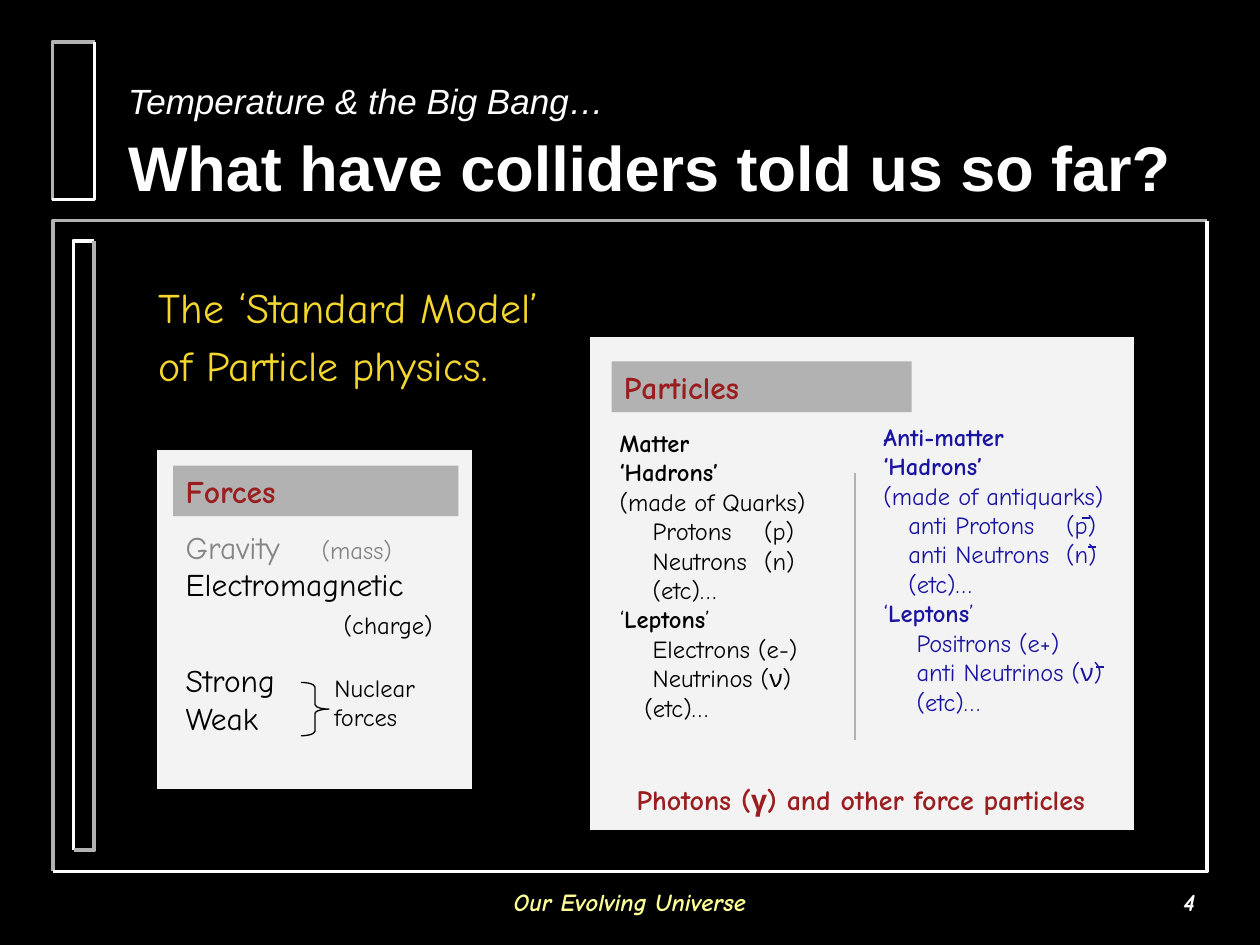
from dataclasses import dataclass

from lxml import etree
from pptx import Presentation
from pptx.dml.color import RGBColor
from pptx.enum.shapes import MSO_CONNECTOR, MSO_SHAPE
from pptx.enum.text import MSO_ANCHOR, MSO_AUTO_SIZE, PP_ALIGN
from pptx.oxml.ns import qn
from pptx.util import Pt

RECT, BRACE = MSO_SHAPE.RECTANGLE, MSO_SHAPE.RIGHT_BRACE
LINE = MSO_CONNECTOR.STRAIGHT
TOP, MIDDLE = MSO_ANCHOR.TOP, MSO_ANCHOR.MIDDLE
LEFT, MID, RIGHT = PP_ALIGN.LEFT, PP_ALIGN.CENTER, PP_ALIGN.RIGHT
FIXED = MSO_AUTO_SIZE.NONE


@dataclass(frozen=True)
class Theme:
    hand: str = "Comic Neue"
    sans: str = "Arial"
    black: str = "000000"
    white: str = "FFFFFF"
    grey: str = "B2B2B2"
    panel: str = "F3F3F3"
    dim: str = "858585"
    red: str = "9A1D1F"
    blue: str = "1914A1"
    gold: str = "F4D72E"
    pale: str = "FFFF99"
    small: int = 14
    mid: int = 16
    big: int = 18
    lead: int = 24
    kicker: int = 20
    gap: int = 40
    title: int = 36


T = Theme()
BODY = {"name": T.hand, "size": T.small, "color": T.black, "bold": False}
BOLD = BODY | {"bold": True}
LARGE = BODY | {"size": T.big}
HEAD = BOLD | {"size": T.big, "color": T.red}
NOTE = HEAD | {"size": T.mid}
ANTI = BODY | {"color": T.blue}
LEAD = BODY | {"size": T.lead, "color": T.gold}
FOOT = BOLD | {"color": T.pale, "italic": True}
TITLE = {"name": T.sans, "size": T.title, "color": T.white, "bold": True}
KICKER = TITLE | {"size": T.kicker, "bold": False, "italic": True}


def rgb(code):
    return RGBColor.from_string(code)


def add_run(para, text, style):
    run = para.add_run()
    run.text = text
    for key, value in style.items():
        if key == "color":
            run.font.color.rgb = rgb(value)
        else:
            setattr(run.font, key, Pt(value) if key == "size" else value)


def set_tabs(para, stops):
    tabs = etree.SubElement(para._p.get_or_add_pPr(), qn("a:tabLst"))
    for stop in stops:
        etree.SubElement(tabs, qn("a:tab"), pos=str(Pt(stop)), algn="l")


def write(frame, lines, align=LEFT, anchor=TOP, stops=()):
    """Fill a frame; each line is a list of (text, style) runs."""
    for key, value in {"word_wrap": True, "auto_size": FIXED,
                       "vertical_anchor": anchor}.items():
        setattr(frame, key, value)
    for i, runs in enumerate(lines):
        para = frame.add_paragraph() if i else frame.paragraphs[0]
        para.alignment = align
        for text, style in runs:
            add_run(para, text, style)
        if stops and any("\t" in text for text, _ in runs):
            set_tabs(para, stops)
    return frame.paragraphs


def place(shape, box):
    for key, value in zip(("left", "top", "width", "height"), box):
        setattr(shape, key, Pt(value))


def add_text(slide, box, lines, **layout):
    shape = slide.shapes.add_textbox(*map(Pt, box))
    return write(shape.text_frame, lines, **layout)


def add_box(slide, box, fill=None, line=None, kind=RECT):
    shape = slide.shapes.add_shape(kind, *map(Pt, box))
    shape.shadow.inherit = False
    if fill:
        shape.fill.solid()
        shape.fill.fore_color.rgb = rgb(fill)
    else:
        shape.fill.background()
    if line:
        shape.line.color.rgb = rgb(line)
        shape.line.width = Pt(0.75)
    else:
        shape.line.fill.background()
    return shape


def add_head(slide, box, text):
    write(add_box(slide, box, T.grey).text_frame, [[(text, HEAD)]])


def add_rule(slide, x, y, dx, dy, color):
    rule = slide.shapes.add_connector(LINE, *map(Pt, (x, y, x + dx, y + dy)))
    rule.line.color.rgb = rgb(color)
    rule.line.width = Pt(1)
    etree.SubElement(rule._element.spPr, qn("a:effectLst"))


def add_frame(slide, box, near, far):
    """Draw a frame as two bends: near by the top left, far by the bottom right."""
    x, y, w, h = map(Pt, box)
    start, end = (x + w, y), (x, y + h)
    for turn, color in (((x, y), near), ((x + w, y + h), far)):
        path = slide.shapes.build_freeform(*start)
        path.add_line_segments([turn, end], close=False)
        bend = path.convert_to_shape()
        bend.shadow.inherit = False
        bend.fill.background()
        bend.line.color.rgb = rgb(color)
        bend.line.width = Pt(2.25)


def add_title(slide):
    title = slide.shapes.title
    place(title, (66, 27.5, 612, 87))
    para = write(title.text_frame, [[("Temperature & the Big Bang…", KICKER),
                                     (" ", TITLE | {"size": T.gap})]],
                 anchor=MIDDLE)[0]
    para.add_line_break()
    add_run(para, "What have colliders told us so far?", TITLE)


def add_lead(slide):
    body = slide.placeholders[1]
    place(body, (47.5, 157, 409.5, 160))
    for para in write(body.text_frame, [[("The ‘Standard Model’", LEAD)],
                                        [("of Particle physics.", LEAD)]]):
        para.level = 1
        para.space_before = Pt(4.8)
        props = para._p.get_or_add_pPr()
        props.set("marL", str(Pt(58.5)))
        props.set("indent", str(Pt(-22.5)))
        etree.SubElement(props, qn("a:buNone"))


def add_forces(slide):
    add_box(slide, (89.5, 256.5, 180.5, 195), T.panel, T.black)
    add_head(slide, (99, 266, 163, 29), "Forces")
    dim = {"color": T.dim}
    paras = add_text(slide, (99, 298, 178, 130), [
        [("Gravity\t", LARGE | dim), ("(mass)", BODY | dim)],
        [("Electromagnetic", LARGE)],
        [("\t", LARGE), ("(charge)", BODY)],
        [("Strong", LARGE)],
        [("Weak", LARGE)]], stops=(77.7,))
    paras[2]._p.pPr.find(qn("a:tabLst"))[0].set("pos", str(Pt(90.3)))
    paras[3].space_before = Pt(11.5)
    brace = add_box(slide, (172, 390, 16, 30.5), None, T.black, BRACE)
    brace.adjustments[0] = 0.16
    add_text(slide, (184, 381, 70, 46), [[("Nuclear", BODY)], [("forces", BODY)]])


def add_kinds(slide, box, style, names, stops):
    """List a matter column: its name, quark note, three hadrons, three leptons."""
    bold = style | {"bold": True}
    name, note, *items = names
    rows = [[(text, style)] for text in items]
    add_text(slide, box, [
        [(name, bold)], [("‘Hadrons’", bold)], [(note, style)], *rows[:3],
        [("‘", style), ("Leptons", bold), ("’", style)], *rows[3:]], stops=stops)


def add_particles(slide):
    add_box(slide, (337, 192.5, 311.5, 282), T.panel, T.black)
    add_head(slide, (349.5, 206.5, 171.5, 29), "Particles")
    add_rule(slide, 488.5, 270.5, 0, 152.5, T.grey)
    add_kinds(slide, (347, 241, 130, 202), BODY, (
        "Matter", "(made of Quarks)",
        "\t\tProtons\t(p)", "\t\tNeutrons\t(n)", "\t\t(etc)…",
        "\t\tElectrons (e-)", "\t\tNeutrinos (ν)", "\t(etc)…"), (14.2, 18.9, 82.6))
    add_kinds(slide, (497.75, 237.5, 157, 175), ANTI, (
        "Anti-matter", "(made of antiquarks)",
        "\tanti Protons\t(p)", "\tanti Neutrons\t(n)", "\t(etc)…",
        "\t\tPositrons (e+)", "\t\tanti Neutrinos (ν)", "\t\t(etc)…"),
        (14.2, 18.9, 104.4))
    for x, y in ((618.5, 296), (622, 312.5), (626.5, 381)):
        add_rule(slide, x, y, 4.3, 0, T.blue)
    add_text(slide, (337.5, 443.5, 309, 26.5),
             [[("Photons (γ) and other force particles", NOTE)]], align=MID)


def main():
    deck = Presentation()
    deck.slide_width, deck.slide_height = Pt(720), Pt(540)
    slide = deck.slides.add_slide(deck.slide_layouts[1])
    slide.background.fill.solid()
    slide.background.fill.fore_color.rgb = rgb(T.black)
    add_frame(slide, (30.5, 126, 659, 372), T.grey, T.white)
    add_frame(slide, (42, 137.5, 12, 348.5), T.white, T.grey)
    add_frame(slide, (30, 24, 24, 90), T.grey, T.white)
    add_title(slide)
    add_lead(slide)
    add_forces(slide)
    add_particles(slide)
    add_text(slide, (246, 497.5, 228, 36), [[("Our Evolving Universe", FOOT)]],
             align=MID, anchor=MIDDLE)
    add_text(slide, (540, 497.5, 150, 36), [[("4", FOOT | {"color": T.white})]],
             align=RIGHT, anchor=MIDDLE)
    deck.save("out.pptx")


if __name__ == "__main__":
    main()
